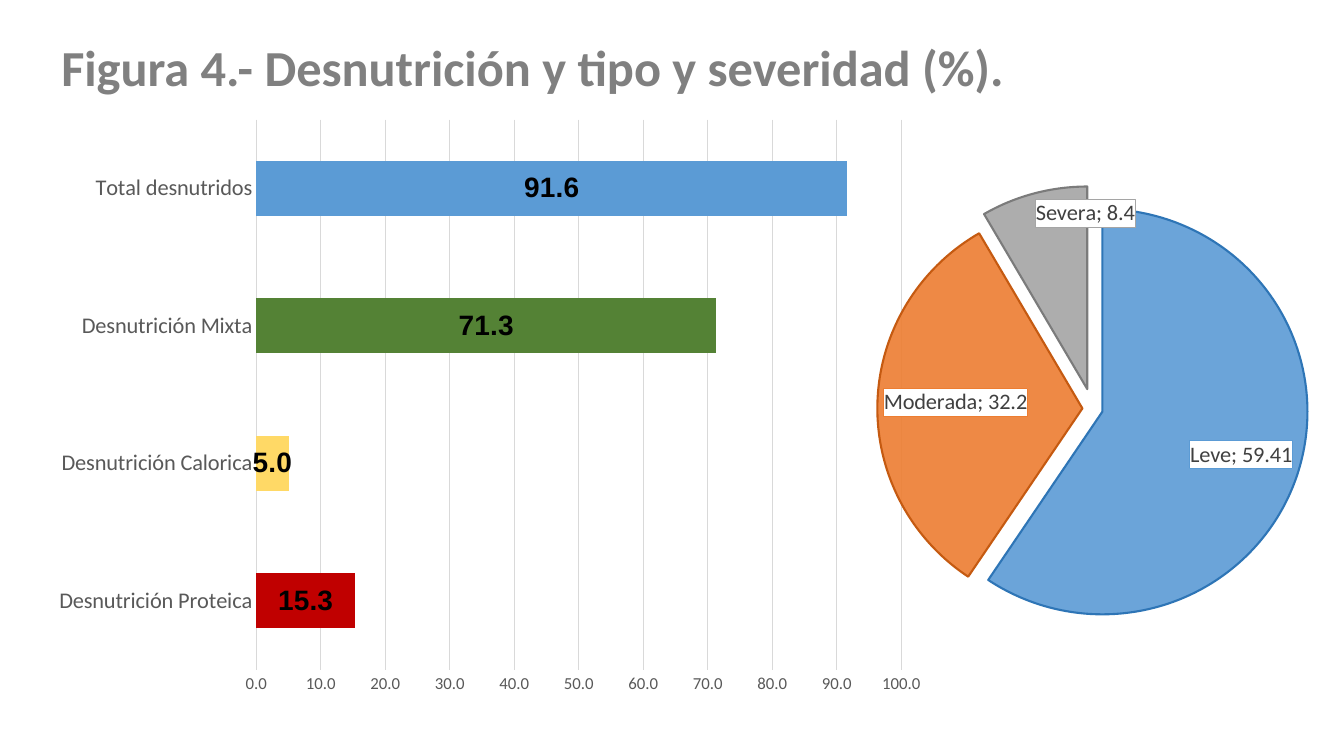
from dataclasses import dataclass

from lxml import etree
from pptx import Presentation
from pptx.chart.chart import Chart
from pptx.chart.data import CategoryChartData
from pptx.dml.color import RGBColor
from pptx.enum.chart import XL_CHART_TYPE, XL_LABEL_POSITION, XL_TICK_MARK
from pptx.enum.text import MSO_AUTO_SIZE
from pptx.oxml import parse_xml
from pptx.oxml.ns import nsdecls, qn
from pptx.slide import Slide
from pptx.util import Pt

BAR_STACKED = XL_CHART_TYPE.BAR_STACKED
PIE = XL_CHART_TYPE.PIE
CENTER = XL_LABEL_POSITION.CENTER
INSIDE_END = XL_LABEL_POSITION.INSIDE_END
NO_TICK = XL_TICK_MARK.NONE
FIT_SHAPE = MSO_AUTO_SIZE.SHAPE_TO_FIT_TEXT


@dataclass(frozen=True)
class Theme:
    font: str = "Calibri"
    bar_label_font: str = "Arial"
    title_color: str = "808080"
    axis_color: str = "595959"
    grid_color: str = "D9D9D9"
    slice_label_color: str = "404040"
    black: str = "000000"
    blue: str = "5B9BD5"
    green: str = "548235"
    yellow: str = "FFD966"
    red: str = "C00000"
    orange: str = "ED7D31"
    gray: str = "A5A5A5"
    dark_blue: str = "2E75B6"
    dark_orange: str = "C55A11"
    dark_gray: str = "7B7B7B"
    title_size: int = 36
    bar_label_size: int = 20
    label_size: int = 16
    scale_size: int = 12
    chart_size: int = 10


@dataclass(frozen=True)
class Box:
    left: float
    top: float
    width: float
    height: float


@dataclass(frozen=True)
class Bar:
    name: str
    value: float
    color: str


@dataclass(frozen=True)
class Slice(Bar):
    outline: str
    explosion: int


THEME = Theme()
TITLE = "Figura 4.- Desnutrición y tipo y severidad (%)."
TITLE_BOX = Box(36.7, 22.3, 697, 51.1)
BAR_BOX = Box(29.5, 77, 640, 427)
PIE_BOX = Box(536.4, 132.5, 488.2, 315.4)
BAR_PLOT = Box(0.24, 0.02, 0.72, 0.92)
PIE_PLOT = Box(0.2, 0.03, 0.6, 0.94)
BARS = [
    Bar("Desnutrición Proteica", 15.3, THEME.red),
    Bar("Desnutrición Calorica", 5.0, THEME.yellow),
    Bar("Desnutrición Mixta", 71.3, THEME.green),
    Bar("Total desnutridos", 91.6, THEME.blue),
]
SLICES = [
    Slice("Leve", 59.41, THEME.blue, THEME.dark_blue, 5),
    Slice("Moderada", 32.2, THEME.orange, THEME.dark_orange, 5),
    Slice("Severa", 8.4, THEME.gray, THEME.dark_gray, 10),
]


def style_font(font, size: int, color: str, name: str = THEME.font, bold: bool = False) -> None:
    font.name = name
    font.size = Pt(size)
    font.bold = bold
    font.color.rgb = RGBColor.from_string(color)


def add_title(slide: Slide) -> None:
    box = TITLE_BOX
    shape = slide.shapes.add_textbox(Pt(box.left), Pt(box.top), Pt(box.width), Pt(box.height))
    text_frame = shape.text_frame
    text_frame.text = TITLE
    text_frame.word_wrap = False
    text_frame.auto_size = FIT_SHAPE
    style_font(text_frame.paragraphs[0].runs[0].font, THEME.title_size, THEME.title_color, bold=True)


def set_plot_layout(chart: Chart, plot: Box) -> None:
    """Fix the inner plot area, given as fractions of the chart."""
    plot_area = chart.element.find(".//" + qn("c:plotArea"))
    for layout in plot_area.findall(qn("c:layout")):
        plot_area.remove(layout)
    plot_area.insert(0, parse_xml(
        f'<c:layout {nsdecls("c")}><c:manualLayout><c:layoutTarget val="inner"/>'
        '<c:xMode val="edge"/><c:yMode val="edge"/>'
        f'<c:x val="{plot.left}"/><c:y val="{plot.top}"/>'
        f'<c:w val="{plot.width}"/><c:h val="{plot.height}"/>'
        '</c:manualLayout></c:layout>'))


def add_chart(slide: Slide, kind, box: Box, plot: Box, items: list) -> Chart:
    data = CategoryChartData()
    data.categories = [item.name for item in items]
    data.add_series("Series 1", [item.value for item in items])
    chart = slide.shapes.add_chart(
        kind, Pt(box.left), Pt(box.top), Pt(box.width), Pt(box.height), data).chart
    chart.has_title = False
    chart.has_legend = False
    style_font(chart.font, THEME.chart_size, THEME.black)
    set_plot_layout(chart, plot)
    for point_index, item in enumerate(items):
        fill = chart.series[0].points[point_index].format.fill
        fill.solid()
        fill.fore_color.rgb = RGBColor.from_string(item.color)
    return chart


def add_bar_chart(slide: Slide) -> None:
    chart = add_chart(slide, BAR_STACKED, BAR_BOX, BAR_PLOT, BARS)
    plot = chart.plots[0]
    plot.vary_by_categories = False
    plot.gap_width = 150
    plot.overlap = 100
    plot.has_data_labels = True
    labels = plot.data_labels
    labels.show_value = True
    labels.number_format = "###0.0"
    labels.number_format_is_linked = False
    labels.position = CENTER
    style_font(labels.font, THEME.bar_label_size, THEME.black, THEME.bar_label_font, True)

    for axis, size in ((chart.category_axis, THEME.label_size), (chart.value_axis, THEME.scale_size)):
        axis.major_tick_mark = NO_TICK
        axis.minor_tick_mark = NO_TICK
        axis.format.line.fill.background()
        style_font(axis.tick_labels.font, size, THEME.axis_color)
    scale = chart.value_axis
    scale.minimum_scale = 0
    scale.maximum_scale = 100
    scale.major_unit = 10
    scale.tick_labels.number_format = "###0.0"
    scale.tick_labels.number_format_is_linked = False
    scale.has_major_gridlines = True
    grid_line = scale.major_gridlines.format.line
    grid_line.width = Pt(0.75)
    grid_line.color.rgb = RGBColor.from_string(THEME.grid_color)


def finish_slice(point_element, explosion: int) -> None:
    """Pull the slice out and make its fill 90 % opaque."""
    properties = point_element.find(qn("c:spPr"))
    for old in point_element.findall(qn("c:explosion")):
        point_element.remove(old)
    properties.addprevious(parse_xml(f'<c:explosion {nsdecls("c")} val="{explosion}"/>'))
    color = properties.find(qn("a:solidFill")).find(qn("a:srgbClr"))
    etree.SubElement(color, qn("a:alpha")).set("val", "90000")


def finish_slice_label(label, border: str) -> None:
    """Show name and value in a white box bordered in the slice colour."""
    label.find(qn("c:showCatName")).set("val", "1")
    text_properties = label.find(qn("c:txPr"))
    text_properties.find(qn("a:bodyPr")).set("wrap", "none")
    text_properties.addprevious(parse_xml(
        f'<c:spPr {nsdecls("c", "a")}><a:solidFill><a:srgbClr val="FFFFFF"/></a:solidFill>'
        f'<a:ln w="9525"><a:solidFill><a:srgbClr val="{border}"/></a:solidFill></a:ln></c:spPr>'))
    etree.SubElement(label, qn("c:separator")).text = "; "


def add_pie_chart(slide: Slide) -> None:
    chart = add_chart(slide, PIE, PIE_BOX, PIE_PLOT, SLICES)
    chart.plots[0].vary_by_categories = True
    for point_index, item in enumerate(SLICES):
        point = chart.series[0].points[point_index]
        point.format.line.width = Pt(1.5)
        point.format.line.color.rgb = RGBColor.from_string(item.outline)
        style_font(point.data_label.font, THEME.label_size, THEME.slice_label_color)
        point.data_label.position = INSIDE_END
    point_elements = chart.element.findall(".//" + qn("c:dPt"))
    label_elements = chart.element.findall(".//" + qn("c:dLbl"))
    for item, point_element, label in zip(SLICES, point_elements, label_elements):
        finish_slice(point_element, item.explosion)
        finish_slice_label(label, item.color)


def main() -> None:
    presentation = Presentation()
    presentation.slide_width = Pt(960)
    presentation.slide_height = Pt(540)
    slide = presentation.slides.add_slide(presentation.slide_layouts[6])
    add_bar_chart(slide)
    add_pie_chart(slide)
    add_title(slide)
    presentation.save("out.pptx")


if __name__ == "__main__":
    main()
